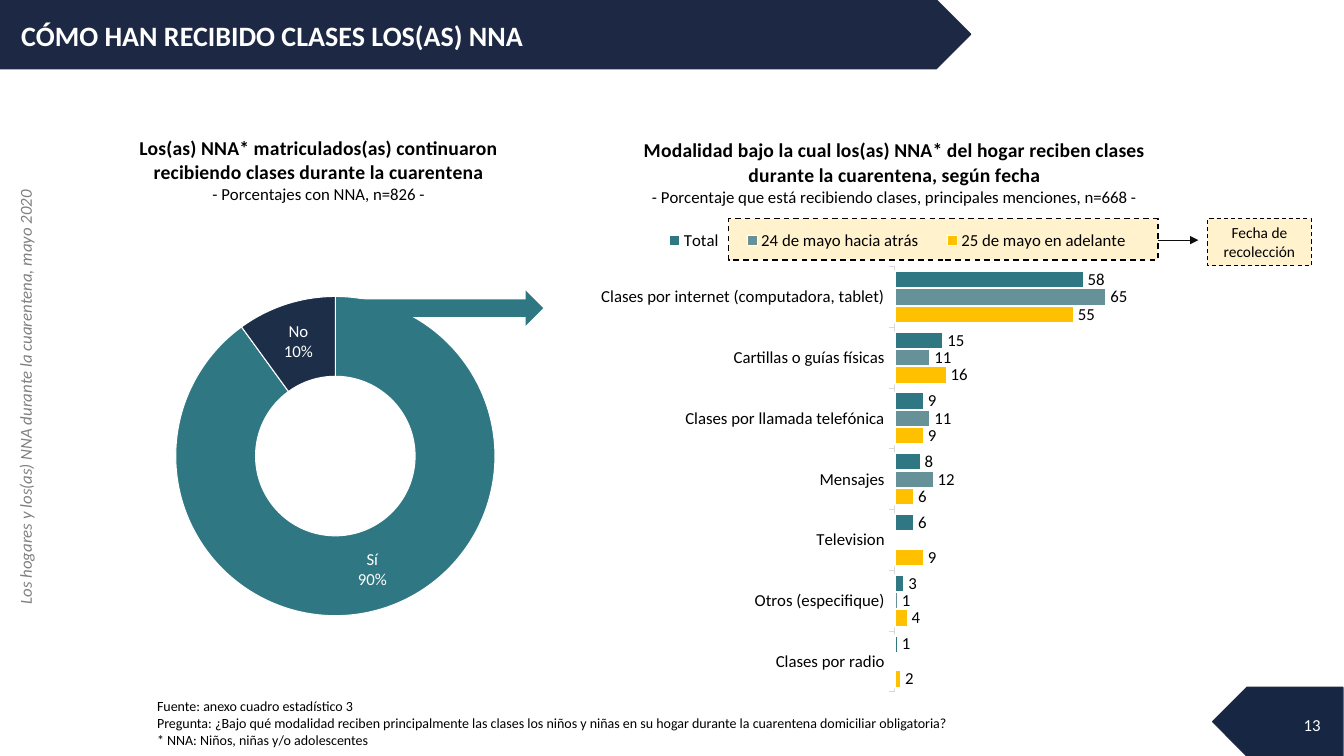
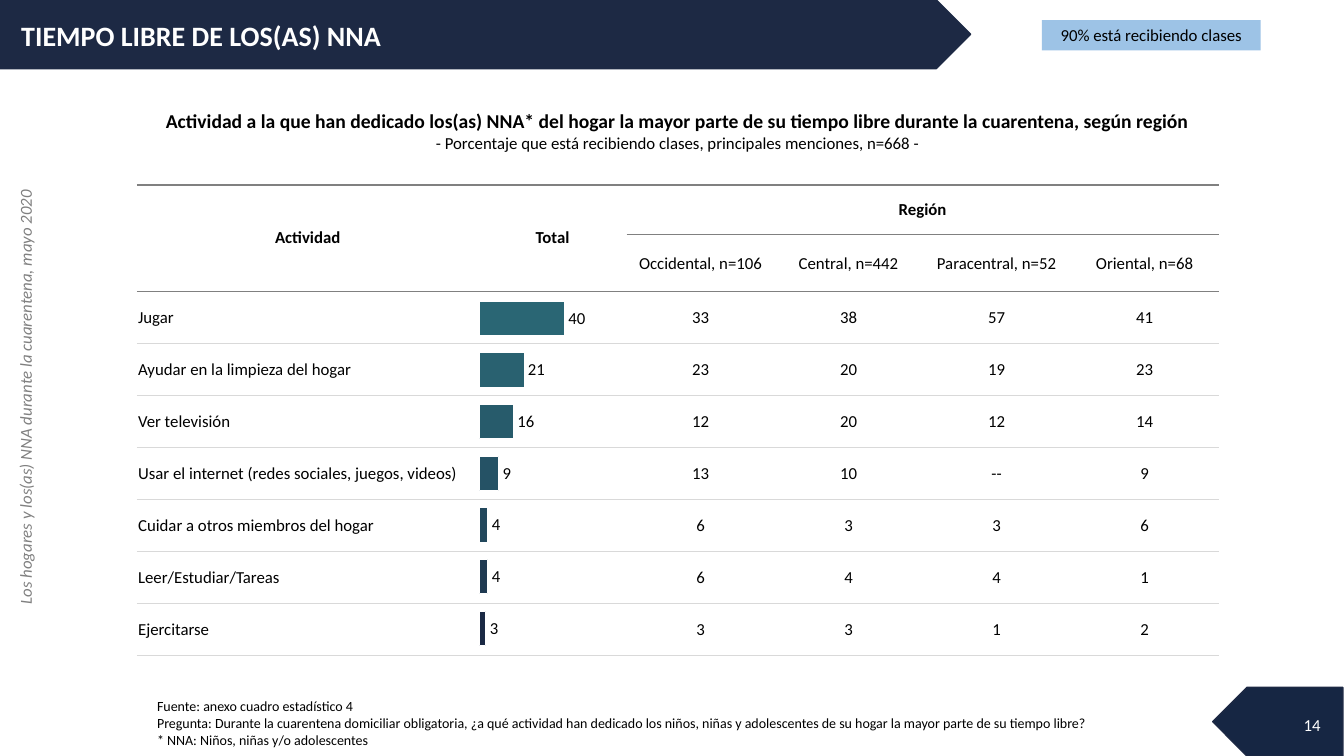
"""Build two slides on classes and free time of children during the quarantine."""
from dataclasses import dataclass
from typing import NamedTuple

from lxml import etree
from pptx import Presentation
from pptx.chart.chart import Chart
from pptx.chart.data import CategoryChartData
from pptx.dml.color import RGBColor
from pptx.enum.chart import XL_CHART_TYPE, XL_LABEL_POSITION, XL_LEGEND_POSITION, XL_TICK_MARK
from pptx.enum.dml import MSO_LINE
from pptx.enum.shapes import MSO_CONNECTOR, MSO_SHAPE
from pptx.enum.text import MSO_ANCHOR, PP_ALIGN
from pptx.oxml.ns import qn
from pptx.presentation import Presentation as Deck
from pptx.shapes.autoshape import Shape
from pptx.slide import Slide
from pptx.table import _Cell
from pptx.text.text import TextFrame
from pptx.util import Cm, Pt

LEFT, CENTER, RIGHT = PP_ALIGN.LEFT, PP_ALIGN.CENTER, PP_ALIGN.RIGHT
TOP, MIDDLE = MSO_ANCHOR.TOP, MSO_ANCHOR.MIDDLE
RECTANGLE, PENTAGON, RIGHT_ARROW = MSO_SHAPE.RECTANGLE, MSO_SHAPE.PENTAGON, MSO_SHAPE.RIGHT_ARROW
STRAIGHT = MSO_CONNECTOR.STRAIGHT
DASH = MSO_LINE.DASH
BAR, DOUGHNUT = XL_CHART_TYPE.BAR_CLUSTERED, XL_CHART_TYPE.DOUGHNUT
OUTSIDE_END = XL_LABEL_POSITION.OUTSIDE_END
LEGEND_TOP = XL_LEGEND_POSITION.TOP
TICK_OUTSIDE, TICK_NONE = XL_TICK_MARK.OUTSIDE, XL_TICK_MARK.NONE

FONT = "Calibri"
BLACK = RGBColor(0x00, 0x00, 0x00)
WHITE = RGBColor(0xFF, 0xFF, 0xFF)
NAVY = RGBColor(0x1D, 0x29, 0x44)
DEEP_NAVY = RGBColor(0x16, 0x26, 0x43)
SLICE_NAVY = RGBColor(0x1C, 0x2E, 0x48)
TEAL = RGBColor(0x2F, 0x77, 0x82)
SOFT_TEAL = RGBColor(0x66, 0x91, 0x99)
AMBER = RGBColor(0xFF, 0xC0, 0x00)
CREAM = RGBColor(0xFF, 0xF2, 0xCC)
SKY = RGBColor(0x9D, 0xC3, 0xE6)
GRAY = RGBColor(0x80, 0x80, 0x80)
PALE_GRAY = RGBColor(0xD9, 0xD9, 0xD9)
ARROW_BLACK = RGBColor(0x0D, 0x0D, 0x0D)
BAR_SHADES = [RGBColor.from_string(shade) for shade in (
    "1A2944", "1F3A51", "22485C", "255265", "275B6B", "296170", "2A6674")]

PLAIN_TABLE = "{2D5ABB26-0587-4C30-8999-92F81FD0307C}"
SURVEY = "Los hogares y los(as) NNA durante la cuarentena, mayo 2020"
NNA_NOTE = "* NNA: Niños, niñas y/o adolescentes"
SAMPLE = "- Porcentaje que está recibiendo clases, principales menciones, n=668 -"


class Box(NamedTuple):
    """Left, top, width and height in centimetres."""
    left: float
    top: float
    width: float
    height: float

    def lengths(self) -> tuple[Cm, ...]:
        """Return the four values as lengths."""
        return tuple(Cm(value) for value in self)


@dataclass(frozen=True)
class Style:
    """Look of a run of text."""
    size: float = 12
    color: RGBColor = BLACK
    bold: bool = False
    italic: bool = False


@dataclass(frozen=True)
class Page:
    """Content of the parts that every slide has."""
    title: str
    number: str
    source: str
    question: str


class Measure(NamedTuple):
    """One series of the modality chart."""
    name: str
    values: tuple[int, ...]
    color: RGBColor


class Activity(NamedTuple):
    """Free-time activity with its total and its values by region."""
    name: str
    total: int
    regions: tuple[str, ...]


BODY = Style()
HEADING = Style(14, bold=True)
HEADER = Style(bold=True)
NOTE = Style(10)
LABEL_WHITE = Style(color=WHITE)

CLASSES = Page(
    "CÓMO HAN RECIBIDO CLASES LOS(AS) NNA", "13", "Fuente: anexo cuadro estadístico 3",
    "Pregunta: ¿Bajo qué modalidad reciben principalmente las clases los niños y niñas en su hogar "
    "durante la cuarentena domiciliar obligatoria?")
FREE_TIME = Page(
    "TIEMPO LIBRE DE LOS(AS) NNA", "14", "Fuente: anexo cuadro estadístico 4",
    "Pregunta: Durante la cuarentena domiciliar obligatoria, ¿a qué actividad han dedicado los niños, "
    "niñas y adolescentes de su hogar la mayor parte de su tiempo libre?")
MODALITIES = ("Clases por radio", "Otros (especifique)", "Television", "Mensajes",
              "Clases por llamada telefónica", "Cartillas o guías físicas",
              "Clases por internet (computadora, tablet)")
MEASURES = (
    Measure("25 de mayo en adelante", (2, 4, 9, 6, 9, 16, 55), AMBER),
    Measure("24 de mayo hacia atrás", (0, 1, 0, 12, 11, 11, 65), SOFT_TEAL),
    Measure("Total", (1, 3, 6, 8, 9, 15, 58), TEAL),
)
REGIONS = ("Occidental, n=106", "Central, n=442", "Paracentral, n=52", "Oriental, n=68")
ACTIVITIES = (
    Activity("Jugar", 40, ("33", "38", "57", "41")),
    Activity("Ayudar en la limpieza del hogar", 21, ("23", "20", "19", "23")),
    Activity("Ver televisión", 16, ("12", "20", "12", "14")),
    Activity("Usar el internet (redes sociales, juegos, videos)", 9, ("13", "10", "--", "9")),
    Activity("Cuidar a otros miembros del hogar", 4, ("6", "3", "3", "6")),
    Activity("Leer/Estudiar/Tareas", 4, ("6", "4", "4", "1")),
    Activity("Ejercitarse", 3, ("3", "3", "1", "2")),
)


def write(frame: TextFrame, lines: list[tuple[str, Style]], align: PP_ALIGN = LEFT) -> None:
    """Write one paragraph for each line."""
    for index, (text, style) in enumerate(lines):
        paragraph = frame.add_paragraph() if index else frame.paragraphs[0]
        paragraph.alignment = align
        run = paragraph.add_run()
        run.text = text
        font = run.font
        font.name, font.size = FONT, Pt(style.size)
        font.bold, font.italic = style.bold, style.italic
        font.color.rgb = style.color


def add_text(slide: Slide, box: Box, lines: list[tuple[str, Style]], align: PP_ALIGN = LEFT,
             anchor: MSO_ANCHOR = TOP) -> Shape:
    """Add a wrapping text box."""
    text_box = slide.shapes.add_textbox(*box.lengths())
    text_box.text_frame.word_wrap = True
    text_box.text_frame.vertical_anchor = anchor
    write(text_box.text_frame, lines, align)
    return text_box


def add_block(slide: Slide, kind: MSO_SHAPE, box: Box, fill: RGBColor, line: RGBColor | None = None,
              width: float = 1, dashed: bool = False, caption: Style = BODY, text: str = "") -> Shape:
    """Add a filled shape, with an outline and a caption if given."""
    block = slide.shapes.add_shape(kind, *box.lengths())
    block.shadow.inherit = False
    block.fill.solid()
    block.fill.fore_color.rgb = fill
    if line is None:
        block.line.fill.background()
    else:
        block.line.color.rgb, block.line.width = line, Pt(width)
        if dashed:
            block.line.dash_style = DASH
    if text:
        block.text_frame.word_wrap = True
        block.text_frame.vertical_anchor = TOP
        write(block.text_frame, [(text, caption)], CENTER)
    return block


def start_slide(deck: Deck, page: Page) -> Slide:
    """Add a slide with its title band, side text, page number and notes."""
    slide = deck.slides.add_slide(deck.slide_layouts[5])
    add_block(slide, PENTAGON, Box(0, 0, 24.46, 1.73), NAVY, NAVY)
    add_block(slide, PENTAGON, Box(30.56, 17.32, 3.28, 1.73), DEEP_NAVY, NAVY).rotation = 180
    add_text(slide, Box(25.91, 17.75, 7.62, 1.02), [(page.number, LABEL_WHITE)], RIGHT, MIDDLE)
    side = Style(color=GRAY, italic=True)
    add_text(slide, Box(-6.53, 9.63, 14.33, 0.76), [(SURVEY, side)], CENTER).rotation = 270
    add_text(slide, Box(3.71, 17.45, 26.49, 1.55),
             [(text, NOTE) for text in (page.source, page.question, NNA_NOTE)])
    title = slide.shapes.title
    title.left, title.top, title.width, title.height = Box(0.28, 0.33, 24.38, 1.12).lengths()
    title.text_frame.vertical_anchor = TOP
    write(title.text_frame, [(page.title, Style(20, WHITE, bold=True))])
    title.element.getparent().append(title.element)
    return slide


def place(chart: Chart, part: str, index: int, **edges: float) -> None:
    """Set the manual layout of a chart part as fractions of the chart."""
    parent = chart.element.find(".//" + qn(part))
    for old in parent.findall(qn("c:layout")):
        parent.remove(old)
    layout = etree.Element(qn("c:layout"))
    manual = etree.SubElement(layout, qn("c:manualLayout"))
    if part == "c:plotArea":
        etree.SubElement(manual, qn("c:layoutTarget")).set("val", "inner")
    for axis in "xy":
        etree.SubElement(manual, qn(f"c:{axis}Mode")).set("val", "edge")
    for edge, value in edges.items():
        etree.SubElement(manual, qn(f"c:{edge}")).set("val", str(value))
    parent.insert(index, layout)


def add_chart(slide: Slide, kind: XL_CHART_TYPE, box: Box, categories: tuple[str, ...],
              measures: dict[str, tuple[int, ...]], title: list[tuple[str, Style]], label: Style) -> Chart:
    """Add a transparent chart with a title, if any, and data labels."""
    data = CategoryChartData()
    data.categories = categories
    for name, values in measures.items():
        data.add_series(name, values)
    chart = slide.shapes.add_chart(kind, *box.lengths(), data).chart
    chart.font.name, chart.font.size, chart.font.color.rgb = FONT, Pt(10), BLACK
    chart.has_legend = False
    chart.has_title = bool(title)
    if title:
        write(chart.chart_title.text_frame, title, CENTER)
    clear = etree.Element(qn("c:spPr"))
    etree.SubElement(clear, qn("a:noFill"))
    etree.SubElement(etree.SubElement(clear, qn("a:ln")), qn("a:noFill"))
    chart.element.find(qn("c:chart")).addnext(clear)
    plot = chart.plots[0]
    plot.vary_by_categories = kind == DOUGHNUT
    plot.has_data_labels = True
    font = plot.data_labels.font
    font.name, font.size, font.color.rgb = FONT, Pt(label.size), label.color
    return chart


def format_bars(chart: Chart, maximum: int) -> None:
    """Set the labels, gaps and scale that the bar charts share."""
    plot = chart.plots[0]
    plot.gap_width = 50
    labels = plot.data_labels
    labels.show_value, labels.position = True, OUTSIDE_END
    labels.number_format, labels.number_format_is_linked = "####", False
    scale = chart.value_axis
    scale.minimum_scale, scale.maximum_scale = 0, maximum
    scale.has_major_gridlines, scale.visible = False, False


def paint(part, fill: RGBColor, width: float) -> None:
    """Fill a series or point and give it a white outline."""
    part.format.fill.solid()
    part.format.fill.fore_color.rgb = fill
    part.format.line.color.rgb, part.format.line.width = WHITE, Pt(width)


def draw_modalities(slide: Slide) -> None:
    """Draw the bar chart of class modalities by date."""
    title = "Modalidad bajo la cual los(as) NNA* del hogar reciben clases durante la cuarentena, según fecha"
    chart = add_chart(slide, BAR, Box(14.33, 2.95, 16.43, 14.5), MODALITIES,
                      {measure.name: measure.values for measure in MEASURES},
                      [(title, HEADING), (SAMPLE, BODY)], BODY)
    format_bars(chart, 100)
    for series, measure in zip(chart.plots[0].series, MEASURES):
        paint(series, measure.color, 1.5)
    axis = chart.category_axis
    axis.major_tick_mark, axis.minor_tick_mark = TICK_OUTSIDE, TICK_NONE
    axis.format.line.color.rgb, axis.format.line.width = PALE_GRAY, Pt(0.75)
    axis.tick_labels.font.size = Pt(12)
    chart.has_legend = True
    chart.legend.position, chart.legend.include_in_layout = LEGEND_TOP, False
    chart.legend.font.size = Pt(12)
    place(chart, "c:legend", 1, x=0.12, y=0.18, w=0.77, h=0.07)
    place(chart, "c:plotArea", 0, x=0.5, y=0.26, w=0.5, h=0.74)


def draw_attendance(slide: Slide) -> None:
    """Draw the doughnut of children who kept receiving classes."""
    title = "Los(as) NNA* matriculados(as) continuaron recibiendo clases durante la cuarentena"
    chart = add_chart(slide, DOUGHNUT, Box(2.21, 3.18, 12.24, 13.41), ("Sí", "No"), {"NNA": (90, 10)},
                      [(title, HEADING), ("- Porcentajes con NNA, n=826 -", BODY)], LABEL_WHITE)
    labels = chart.plots[0].data_labels
    labels.show_value, labels.show_percentage, labels.show_category_name = False, True, True
    labels.number_format, labels.number_format_is_linked = "0%", False
    separator = etree.Element(qn("c:separator"))
    separator.text = "\n"
    chart.element.find(".//" + qn("c:showBubbleSize")).addnext(separator)
    for index, color in enumerate((TEAL, SLICE_NAVY)):
        paint(chart.plots[0].series[0].points[index], color, 0.75)
    place(chart, "c:title", 1, x=0.1, y=0.01)
    place(chart, "c:plotArea", 0, x=0.18, y=0.32, w=0.66, h=0.6)


def add_date_arrow(slide: Slide) -> None:
    """Add the thin arrow from the legend frame to the date box."""
    arrow = slide.shapes.add_connector(STRAIGHT, Cm(29.18), Cm(6.05), Cm(30.2), Cm(6.05))
    arrow.line.color.rgb, arrow.line.width = ARROW_BLACK, Pt(0.5)
    etree.SubElement(arrow.line._get_or_add_ln(), qn("a:tailEnd")).set("type", "triangle")
    etree.SubElement(arrow.element.spPr, qn("a:effectLst"))


def rule(cell: _Cell, edge: str, color: RGBColor) -> None:
    """Draw a one-point border on an edge of a cell."""
    line = etree.Element(qn(f"a:ln{edge}"), w=str(Pt(1)))
    etree.SubElement(etree.SubElement(line, qn("a:solidFill")), qn("a:srgbClr")).set("val", str(color))
    properties = cell._tc.get_or_add_tcPr()
    properties.insert(len(properties.findall(qn("a:lnT"))), line)


def draw_activities(slide: Slide) -> None:
    """Draw the table of activities by region and the bars of its total column."""
    heights = [2.02, 1.25, 1.43] + [1.31] * len(ACTIVITIES)
    widths = [8.61] + [3.73] * 5
    box = Box(3.45, 2.64, sum(widths), sum(heights))
    table = slide.shapes.add_table(len(heights), len(widths), *box.lengths()).table
    table.first_row = table.horz_banding = False
    table._tbl.tblPr.find(qn("a:tableStyleId")).text = PLAIN_TABLE
    for column, width in zip(table.columns, widths):
        column.width = Cm(width)
    for row, height in zip(table.rows, heights):
        row.height = Cm(height)
    for first, last in (((0, 0), (0, 5)), ((1, 0), (2, 0)), ((1, 1), (2, 1)), ((1, 2), (1, 5))):
        table.cell(*first).merge(table.cell(*last))
    title = ("Actividad a la que han dedicado los(as) NNA* del hogar la mayor parte de su tiempo libre "
             "durante la cuarentena, según región")
    texts = {(0, 0): [(title, HEADING), (SAMPLE, BODY)]}
    texts |= {(1, col): [(text, HEADER)] for col, text in enumerate(("Actividad", "Total", "Región"))}
    texts |= {(2, col): [(text, BODY)] for col, text in enumerate(REGIONS, 2)}
    for row, activity in enumerate(ACTIVITIES, 3):
        texts[row, 0] = [(activity.name, BODY)]
        texts |= {(row, col): [(text, BODY)] for col, text in enumerate(activity.regions, 2)}
    for row in range(len(heights)):
        for col in range(len(widths)):
            cell = table.cell(row, col)
            cell.fill.background()
            if cell.is_spanned:
                continue
            cell.vertical_anchor = MIDDLE if row else TOP
            if row > 1:
                cell.margin_left = cell.margin_right = cell.margin_top = Cm(0.03)
                cell.margin_bottom = 0
            if row:
                rule(cell, "T", GRAY if row <= 3 else PALE_GRAY)
            rule(cell, "B", GRAY if row <= 2 else PALE_GRAY)
            write(cell.text_frame, texts.get((row, col), []), LEFT if row > 2 and not col else CENTER)
    totals = tuple(activity.total for activity in reversed(ACTIVITIES))
    names = tuple(activity.name for activity in reversed(ACTIVITIES))
    chart = add_chart(slide, BAR, Box(12.07, 7.37, 3.76, 9.12), names, {"Total": totals}, [], BODY)
    format_bars(chart, 70)
    chart.category_axis.visible = False
    for index, shade in enumerate(BAR_SHADES):
        paint(chart.plots[0].series[0].points[index], shade, 0.75)
    place(chart, "c:plotArea", 0, x=0, y=0, w=1, h=1)


def main() -> None:
    """Build and save the presentation."""
    deck = Presentation()
    deck.slide_width, deck.slide_height = Cm(33.87), Cm(19.05)
    classes = start_slide(deck, CLASSES)
    add_block(classes, RECTANGLE, Box(18.36, 5.51, 10.82, 1.04), CREAM, BLACK, dashed=True)
    draw_modalities(classes)
    draw_attendance(classes)
    add_block(classes, RIGHT_ARROW, Box(8.97, 7.32, 4.72, 0.89), TEAL)
    add_date_arrow(classes)
    add_block(classes, RECTANGLE, Box(30.43, 5.51, 2.62, 1.19), CREAM, BLACK, 0.75, True,
              Style(11), "Fecha de recolección")
    free_time = start_slide(deck, FREE_TIME)
    draw_activities(free_time)
    add_block(free_time, RECTANGLE, Box(26.26, 0.51, 5.51, 0.76), SKY, text="90% está recibiendo clases")
    deck.save("out.pptx")


if __name__ == "__main__":
    main()
